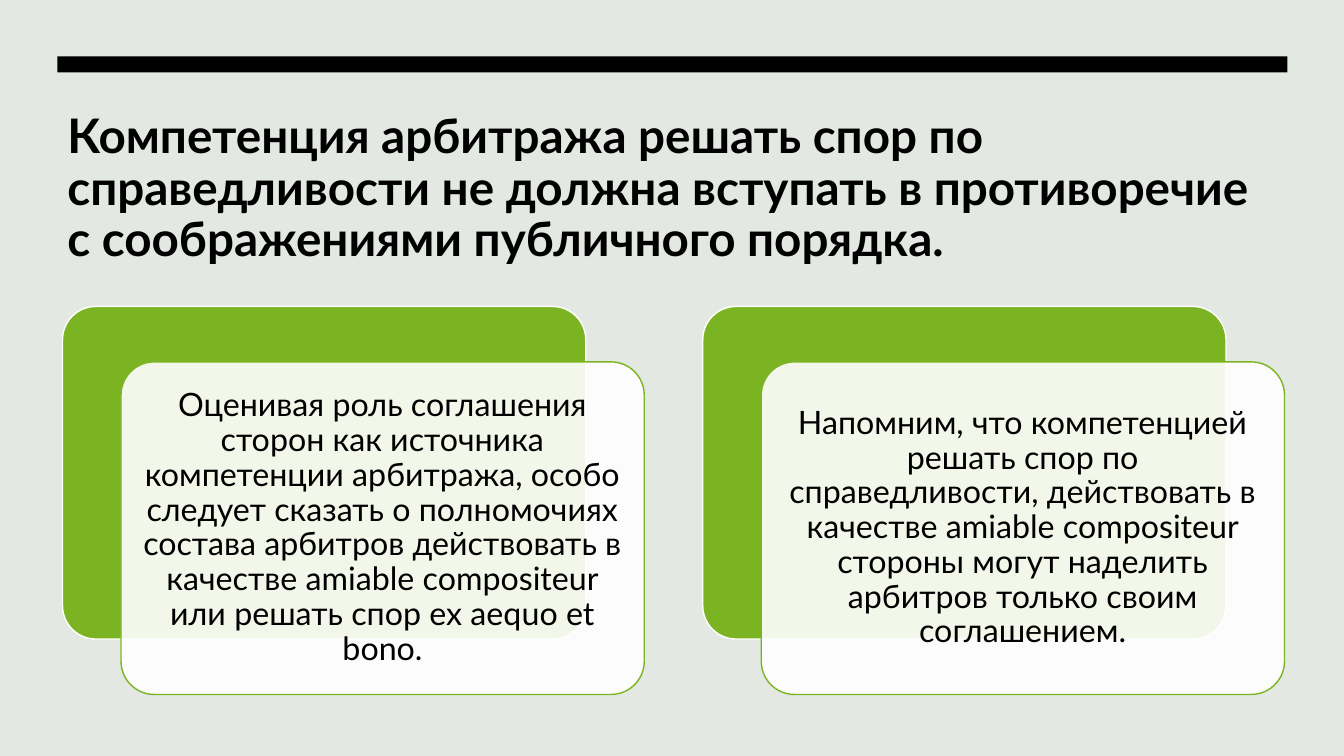
import pptx
import pptx.dml.color
import pptx.enum.shapes
import pptx.enum.text
import pptx.oxml
import pptx.oxml.ns
import pptx.util

RGBColor = pptx.dml.color.RGBColor
MSO_SHAPE = pptx.enum.shapes.MSO_SHAPE
PP_ALIGN = pptx.enum.text.PP_ALIGN
MSO_ANCHOR = pptx.enum.text.MSO_ANCHOR

PAPER = RGBColor(0xE4, 0xE8, 0xE2)
BLACK = RGBColor(0x00, 0x00, 0x00)
GREEN = RGBColor(0x7B, 0xB4, 0x22)
WHITE = RGBColor(0xFF, 0xFF, 0xFF)

FONT = "Lato"
EMU_PER_PX = 9144  # 100 px to the inch

TITLE = (
    "Компетенция арбитража решать спор по справедливости не должна "
    "вступать в противоречие с соображениями публичного порядка."
)
CARD_TEXTS = [
    "Оценивая роль соглашения сторон как источника компетенции арбитража, "
    "особо следует сказать о полномочиях состава арбитров действовать в "
    "качестве amiable compositeur или решать спор ex aequo et bono.",
    "Напомним, что компетенцией решать спор по справедливости, действовать "
    "в качестве amiable compositeur стороны могут наделить арбитров только "
    "своим соглашением.",
]

MARGIN, CONTENT_WIDTH = 57, 1220
CARD_LEFT, CARD_TOP = 62, 304
CARD_WIDTH, CARD_HEIGHT = 519, 330
CARD_STEP = 635
FRONT_SHIFT_X, FRONT_SHIFT_Y = 58, 55


def px(length):
    return pptx.util.Emu(length * EMU_PER_PX)


def add_panel(page, kind, left, top, width, height, fill, line=None):
    panel = page.shapes.add_shape(kind, px(left), px(top), px(width), px(height))
    panel.shadow.inherit = False
    panel.fill.solid()
    panel.fill.fore_color.rgb = fill
    if line is None:
        panel.line.fill.background()
    else:
        panel.line.color.rgb = line
        panel.line.width = pptx.util.Pt(1)
    return panel


def set_opacity(panel, percent):
    color = panel.fill._xPr.find(".//" + pptx.oxml.ns.qn("a:srgbClr"))
    alpha = color.makeelement(pptx.oxml.ns.qn("a:alpha"), {"val": str(percent * 1000)})
    color.append(alpha)


def write_text(box, text, size, align, anchor, bold=False):
    frame = box.text_frame
    frame.word_wrap = True
    frame.vertical_anchor = anchor
    frame.text = text
    para = frame.paragraphs[0]
    para.alignment = align
    para.line_spacing = 0.9
    font = para.runs[0].font
    font.name = FONT
    font.size = pptx.util.Pt(size)
    font.bold = bold
    font.color.rgb = BLACK


def add_title(page):
    box = page.shapes.add_textbox(px(MARGIN), px(107), px(CONTENT_WIDTH), px(179))
    write_text(box, TITLE, 34, PP_ALIGN.LEFT, MSO_ANCHOR.TOP, bold=True)


def add_card(page, left, top, text):
    size = (CARD_WIDTH, CARD_HEIGHT)
    back = add_panel(page, MSO_SHAPE.ROUNDED_RECTANGLE, left, top, *size, GREEN, WHITE)
    front = add_panel(page, MSO_SHAPE.ROUNDED_RECTANGLE, left + FRONT_SHIFT_X,
                      top + FRONT_SHIFT_Y, *size, WHITE, GREEN)
    for panel in (back, front):
        panel.adjustments[0] = 0.1
    set_opacity(front, 90)

    frame = front.text_frame
    frame.margin_left = frame.margin_right = px(10)
    frame.margin_top = frame.margin_bottom = px(10)
    write_text(front, text, 23, PP_ALIGN.CENTER, MSO_ANCHOR.MIDDLE)


def main():
    deck = pptx.Presentation()
    deck.slide_width, deck.slide_height = px(1333), px(750)
    page = deck.slides.add_slide(deck.slide_layouts[6])
    page.background.fill.solid()
    page.background.fill.fore_color.rgb = PAPER

    # Heading under a black bar
    add_title(page)
    add_panel(page, MSO_SHAPE.RECTANGLE, MARGIN, 56, CONTENT_WIDTH, 16, BLACK)

    # Two layered cards
    for index, text in enumerate(CARD_TEXTS):
        add_card(page, CARD_LEFT + index * CARD_STEP, CARD_TOP, text)

    deck.save("out.pptx")


if __name__ == "__main__":
    main()
